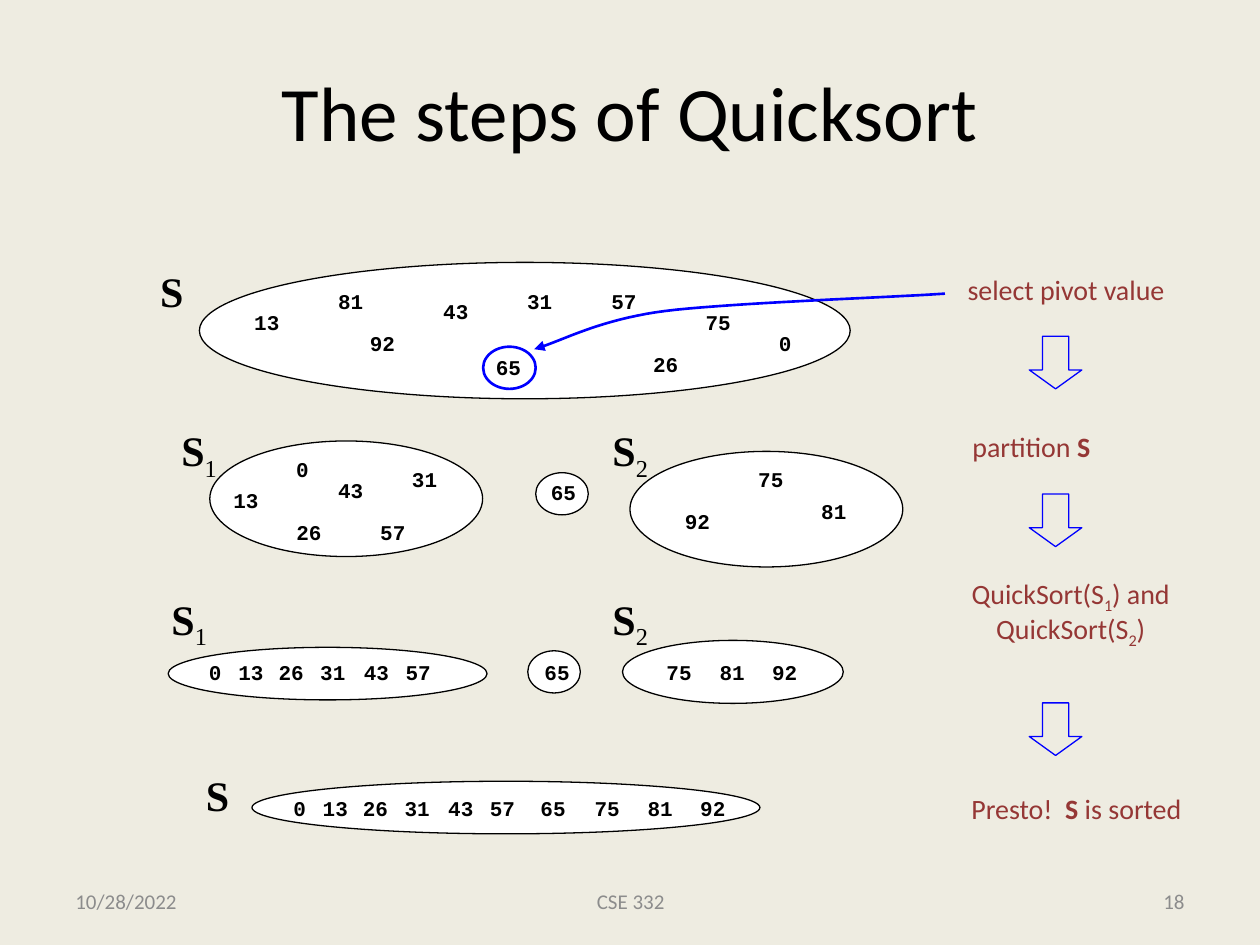
"""Build the slide that walks through the steps of Quicksort."""
from pptx import Presentation
from pptx import util as u
from pptx.dml.color import RGBColor
from pptx.enum import shapes, text
from pptx.oxml import parse_xml
from pptx.oxml.ns import nsdecls

BEIGE = RGBColor(0xEE, 0xEC, 0xE1)
WHITE = RGBColor(0xFF, 0xFF, 0xFF)
BLACK = RGBColor(0, 0, 0)
BLUE = RGBColor(0, 0, 0xFF)
BRICK = RGBColor(0x95, 0x37, 0x35)
GREY = RGBColor(0x8C, 0x8C, 0x8C)

TITLE = {"name": "Calibri", "size": u.Pt(44)}
VALUE = {"name": "Courier New", "size": u.Pt(12), "bold": True}
SET_NAME = {"name": "Times New Roman", "size": u.Pt(24), "bold": True}
STEP = {"name": "Calibri", "size": u.Pt(16)}
FOOTER = {"name": "Calibri", "size": u.Pt(12)}
SUB = {"bold": False, "baseline": -25000}
BOLD = {"bold": True}

ALIGN = text.PP_ALIGN
OVAL = shapes.MSO_SHAPE.OVAL
PIVOT_SIZE = (1.06, 0.85)
PARTITION_SIZE = (5.5, 2.33)

OVALS = [
    (4.02, 5.29, 13.12, 2.75),
    (4.23, 8.89, *PARTITION_SIZE),
    (10.8, 9.53, *PIVOT_SIZE),
    (12.7, 9.1, *PARTITION_SIZE),
    (3.39, 13.05, 6.43, 1.06),
    (10.64, 13.12, *PIVOT_SIZE),
    (12.55, 12.91, 4.45, 1.27),
    (5.08, 15.75, 10.24, 1.06),
]
UNSORTED = {
    13: (4.87, 6.14), 81: (6.56, 5.72), 92: (7.2, 6.56), 43: (8.68, 5.93),
    65: (9.74, 7.06), 31: (10.37, 5.72), 57: (12.07, 5.72),
    26: (12.91, 6.99), 75: (13.97, 6.14), 0: (15.45, 6.56),
}
PARTITIONED = {
    13: (4.45, 9.74), 0: (5.72, 9.1), 26: (5.72, 10.37), 43: (6.56, 9.53),
    57: (7.41, 10.37), 31: (8.05, 9.31), 65: (10.85, 9.57),
    92: (13.55, 10.16), 75: (15.03, 9.31), 81: (16.3, 9.95),
}
SMALL = {0: 3.96, 13: 4.55, 26: 5.36, 31: 6.2, 43: 7.08, 57: 7.92}
LARGE = {75: 13.18, 81: 14.25, 92: 15.31}

SET_NAMES = [
    (2.97, 5.28, ""), (3.38, 8.46, "1"), (12.07, 8.46, "2"),
    (3.18, 11.86, "1"), (12.07, 11.86, "2"), (3.89, 15.44, ""),
]
STEPS = [
    ((19.23, 5.44, 4.52, 0.86), [[("select pivot value", {})]]),
    ((19.33, 8.61, 2.92, 0.86), [[("partition ", {}), ("S", BOLD)]]),
    ((19.3, 11.58, 4.57, 1.5), [
        [("QuickSort(S", {}), ("1", SUB), (") and", {})],
        [("QuickSort(S", {}), ("2", SUB), (")", {})],
    ]),
    ((19.3, 15.9, 4.8, 0.86),
     [[("Presto!  ", {}), ("S", BOLD), (" is sorted", {})]]),
]
ARROW_TOPS = [6.78, 9.96, 14.17]
PIVOT_CURVE = [
    [(19.05, 5.92), (18.11, 5.99), (14.81, 6.1), (13.41, 6.27)],
    [(13.41, 6.27), (12.04, 6.45), (11.33, 6.88), (10.77, 7.04)],
]
FOOTERS = [
    (1.27, 5.92, "10/28/2022", ALIGN.LEFT),
    (8.69, 8.05, "CSE 332", ALIGN.CENTER),
    (18.21, 5.92, "18", ALIGN.RIGHT),
]


def cm(values):
    """Turn numbers into lengths."""
    return [u.Cm(value) for value in values]


def write(frame, paragraphs, style, color, align=ALIGN.CENTER, spacing=None):
    """Fill a text frame with paragraphs of (words, extra format) runs."""
    frame.vertical_anchor = text.MSO_ANCHOR.MIDDLE
    for index, pieces in enumerate(paragraphs):
        line = frame.add_paragraph() if index else frame.paragraphs[0]
        line.alignment = align
        line.line_spacing = spacing
        for words, extra in pieces:
            run = line.add_run()
            run.text = words
            values = {**style, **extra}
            baseline = values.pop("baseline", None)
            for key, value in values.items():
                setattr(run.font, key, value)
            run.font.color.rgb = color
            if baseline:
                run.font._element.set("baseline", str(baseline))


def add_title(slide, words):
    """Place the slide title."""
    title = slide.shapes.title
    title.left, title.top, title.width, title.height = cm((1.27, 0.64, 22.86, 3.18))
    write(title.text_frame, [[(words, {})]], TITLE, BLACK)


def add_label(slide, box, paragraphs, style, color=BLACK):
    """Add a centred label that does not wrap."""
    frame = slide.shapes.add_textbox(*cm(box)).text_frame
    frame.word_wrap = False
    frame.auto_size = text.MSO_AUTO_SIZE.SHAPE_TO_FIT_TEXT
    write(frame, paragraphs, style, color, spacing=0.9)


def add_values(slide, places):
    """Add numbers at their (left, top) places."""
    for number, place in places.items():
        width = 1.02 if number else 0.76
        add_label(slide, (*place, width, 0.76), [[(str(number), {})]], VALUE)


def outline(shape, color, width, fill=None):
    """Set the line and the fill of a shape."""
    shape.shadow.inherit = False
    shape.line.color.rgb = color
    shape.line.width = u.Pt(width)
    if fill is None:
        shape.fill.background()
    else:
        shape.fill.solid()
        shape.fill.fore_color.rgb = fill


def add_figure(slide, kind, box, color, width, fill=None):
    """Add an outlined preset shape."""
    figure = slide.shapes.add_shape(kind, *cm(box))
    outline(figure, color, width, fill)
    return figure


def bezier(points, t):
    """Return the point at t on a cubic curve."""
    weights = ((1 - t) ** 3, 3 * t * (1 - t) ** 2, 3 * t * t * (1 - t), t ** 3)
    return tuple(u.Cm(sum(w * p[axis] for w, p in zip(weights, points)))
                 for axis in (0, 1))


def add_pivot_curve(slide, steps=20):
    """Draw the curved arrow to the pivot."""
    track = [bezier(part, i / steps)
             for part in PIVOT_CURVE for i in range(1, steps + 1)]
    builder = slide.shapes.build_freeform(*bezier(PIVOT_CURVE[0], 0))
    builder.add_line_segments(track, close=False)
    curve = builder.convert_to_shape()
    outline(curve, BLUE, 1.5)
    curve.line._get_or_add_ln().append(
        parse_xml(f'<a:tailEnd {nsdecls("a")} type="triangle"/>'))


def add_footer(slide, left, width, words, align):
    """Add one part of the footer line."""
    frame = slide.shapes.add_textbox(*cm((left, 17.65, width, 1.02))).text_frame
    frame.word_wrap = True
    write(frame, [[(words, {})]], FOOTER, GREY, align)


def main():
    """Build and save the slide."""
    deck = Presentation()
    deck.slide_width, deck.slide_height = cm((25.4, 19.05))
    slide = deck.slides.add_slide(deck.slide_layouts[5])
    slide.background.fill.solid()
    slide.background.fill.fore_color.rgb = BEIGE
    add_title(slide, "The steps of Quicksort")

    for box in OVALS:
        add_figure(slide, OVAL, box, BLACK, 0.75, WHITE)
    sorted_parts = {**SMALL, 65: 10.72, **LARGE}
    merged = {**{n: x + 1.7 for n, x in SMALL.items()}, 65: 10.64,
              **{n: x - 1.45 for n, x in LARGE.items()}}
    add_values(slide, UNSORTED)
    add_values(slide, PARTITIONED)
    for row, top in ((sorted_parts, 13.2), (merged, 15.95)):
        add_values(slide, {n: (x, top) for n, x in row.items()})
    add_figure(slide, OVAL, (9.74, 6.99, *PIVOT_SIZE), BLUE, 1.5)

    for left, top, index in SET_NAMES:
        pieces = [("S", {})] + ([(index, SUB)] if index else [])
        add_label(slide, (left, top, 1.27 if index else 0.99, 1.27), [pieces], SET_NAME)
    for box, paragraphs in STEPS:
        add_label(slide, box, paragraphs, STEP, BRICK)
    add_pivot_curve(slide)
    for top in ARROW_TOPS:
        arrow = add_figure(slide, shapes.MSO_SHAPE.DOWN_ARROW,
                           (20.75, top, 1.06, 1.06), BLUE, 0.75)
        arrow.adjustments[1] = 0.36
    for part in FOOTERS:
        add_footer(slide, *part)
    deck.save("out.pptx")


if __name__ == "__main__":
    main()
